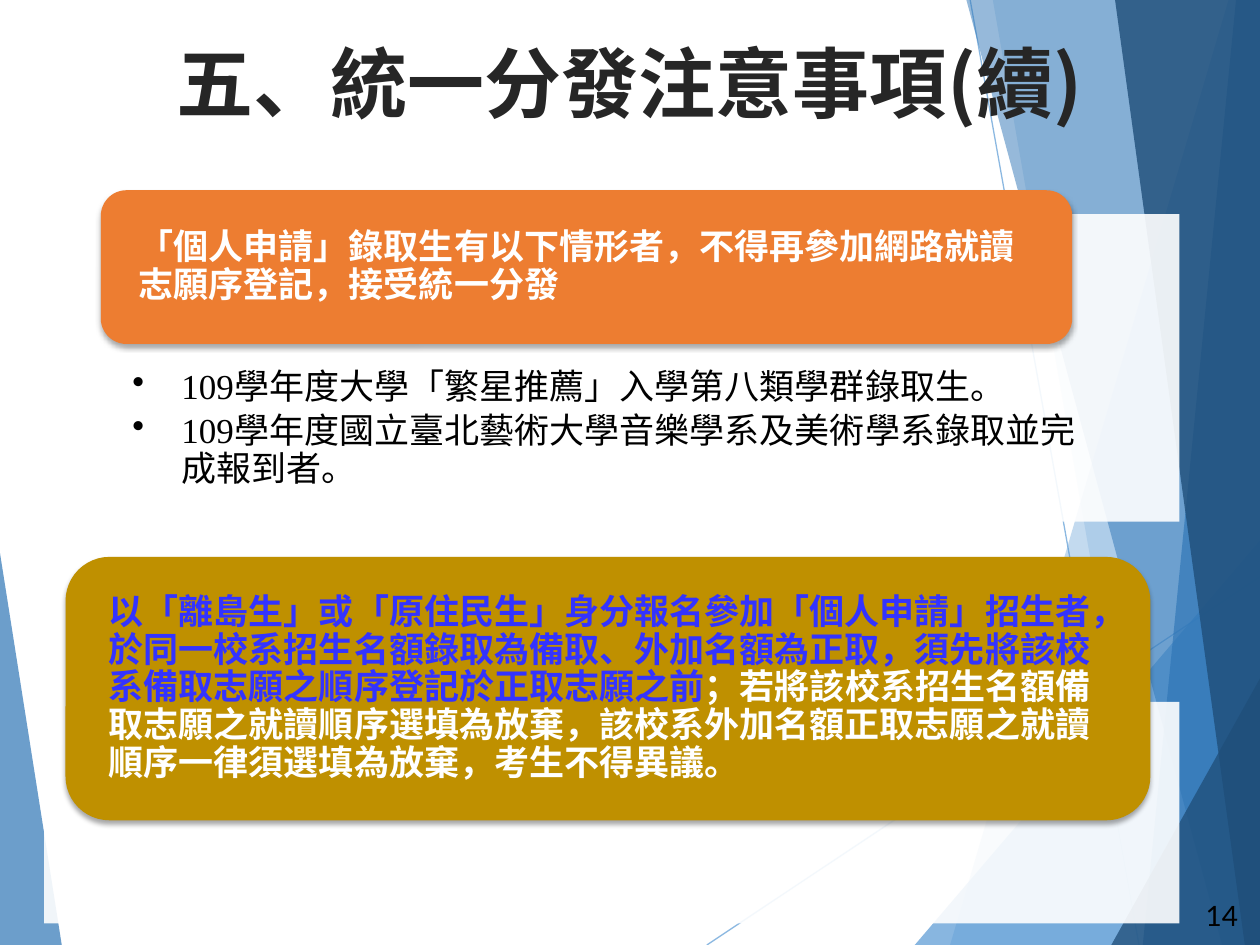
from lxml import etree
from pptx import Presentation
from pptx.dml.color import RGBColor
from pptx.enum import shapes, text
from pptx.oxml import parse_xml
from pptx.oxml.ns import nsdecls, qn
from pptx.util import Inches, Pt

SKY = RGBColor(0x5B, 0x9B, 0xD5)
BLUE = RGBColor(0x2E, 0x75, 0xB6)
NAVY = RGBColor(0x1F, 0x4E, 0x79)
ORANGE = RGBColor(0xED, 0x7D, 0x31)
GOLD = RGBColor(0xBF, 0x90, 0x00)
VIOLET = RGBColor(0x33, 0x33, 0xFF)
INK = RGBColor(0x26, 0x26, 0x26)
BLACK = RGBColor(0, 0, 0)
WHITE = RGBColor(0xFF, 0xFF, 0xFF)

CJK = "Noto Sans CJK SC"
SERIF = "Times New Roman"

RAYS = [((5.61, 7.5), (10.01, 4.57)), ((7.7, 0), (9.04, 7.5))]
FACETS = [
    (SKY, 36, [(9.75, 0), (7.54, 7.5), (10.02, 7.5), (10.01, 0)]),
    (SKY, 20, [(7.88, 0), (9.19, 7.5), (10.01, 7.5), (10.01, 0)]),
    (SKY, 72, [(7.26, 7.5), (10, 4.29), (10.01, 7.5)]),
    (BLUE, 50, [(7.67, 0), (9.7, 7.5), (10.01, 7.5), (10.01, 0)]),
    (BLUE, 66, [(9.81, 0), (9.07, 7.5), (10.01, 7.5), (10, 0)]),
    (NAVY, 80, [(8.85, 0), (9.88, 7.5), (10.02, 7.5), (10, 0)]),
    (NAVY, 76, [(8.82, 7.5), (10.02, 5.35), (10.02, 7.5)]),
    (BLUE, 70, [(0, 4.39), (0.49, 7.5), (0, 7.5)]),
]

TITLE = "五、統一分發注意事項(續)"
RULE = "「個人申請」錄取生有以下情形者，不得再參加網路就讀志願序登記，接受統一分發"
CASES = [
    "109學年度大學「繁星推薦」入學第八類學群錄取生。",
    "109學年度國立臺北藝術大學音樂學系及美術學系錄取並完成報到者。",
]
PRIORITY = ("以「離島生」或「原住民生」身分報名參加「個人申請」招生者，"
            "於同一校系招生名額錄取為備取、外加名額為正取，"
            "須先將該校系備取志願之順序登記於正取志願之前")
CONSEQUENCE = ("；若將該校系招生名額備取志願之就讀順序選填為放棄，"
               "該校系外加名額正取志願之就讀順序一律須選填為放棄，考生不得異議。")


def apply(target, **values):
    for name, value in values.items():
        setattr(target, name, value)


def box(left, top, width, height):
    return [Inches(v) for v in (left, top, width, height)]


def set_alpha(drawn, percent):
    """Make the solid fill or line colour partly transparent."""
    colour = drawn._xPr.find(qn("a:solidFill"))[0]
    etree.SubElement(colour, qn("a:alpha"), val=str(percent * 1000))


def fill_plain(shape, colour, alpha=100):
    shape.shadow.inherit = False
    shape.fill.solid()
    shape.fill.fore_color.rgb = colour
    shape.line.fill.background()
    if alpha < 100:
        set_alpha(shape.fill, alpha)


def set_insets(frame, left, top, right, bottom):
    apply(frame, word_wrap=True, margin_left=Inches(left), margin_top=Inches(top),
          margin_right=Inches(right), margin_bottom=Inches(bottom))


def add_run(paragraph, words, colour, size=20, latin=SERIF, bold=False):
    run = paragraph.add_run()
    run.text = words
    apply(run.font, size=Pt(size), name=latin, bold=bold)
    run.font.color.rgb = colour
    etree.SubElement(run._r.get_or_add_rPr(), qn("a:ea"), typeface=CJK)


def add_ray(slide, start, end):
    ray = slide.shapes.add_connector(
        shapes.MSO_CONNECTOR.STRAIGHT, *[Inches(v) for v in start + end])
    ray.line.width = Pt(0.75)
    ray.line.color.rgb = SKY
    ray._element.spPr.find(qn("a:ln")).find(qn("a:solidFill"))[0].append(
        parse_xml(f'<a:alpha {nsdecls("a")} val="70000"/>'))
    etree.SubElement(ray._element.spPr, qn("a:effectLst"))


def add_facet(slide, colour, alpha, corners):
    points = [(Inches(x), Inches(y)) for x, y in corners]
    builder = slide.shapes.build_freeform(*points[0])
    builder.add_line_segments(points[1:])
    fill_plain(builder.convert_to_shape(), colour, alpha)


def add_panel(slide, top, height):
    panel = slide.shapes.add_shape(
        shapes.MSO_SHAPE.RECTANGLE, *box(0.35, top, 9.01, height))
    fill_plain(panel, WHITE, 90)
    return panel


def add_cases(panel):
    frame = panel.text_frame
    set_insets(frame, 0.7, 1.23, 0.7, 0.16)
    frame.vertical_anchor = text.MSO_ANCHOR.TOP
    for index, words in enumerate(CASES):
        paragraph = frame.add_paragraph() if index else frame.paragraphs[0]
        apply(paragraph, alignment=text.PP_ALIGN.LEFT, line_spacing=0.9,
              space_after=Pt(3.5))
        props = paragraph._p.get_or_add_pPr()
        props.set("marL", str(Inches(0.39)))
        props.set("indent", str(Inches(-0.39)))
        etree.SubElement(props, qn("a:buChar"), char="•")
        add_run(paragraph, words, BLACK)


def add_callout(slide, bounds, colour, runs):
    """Add a rounded box with a soft shadow; runs are (words, colour) pairs."""
    callout = slide.shapes.add_shape(
        shapes.MSO_SHAPE.ROUNDED_RECTANGLE, *box(*bounds))
    fill_plain(callout, colour)
    callout._element.spPr.find(qn("a:effectLst")).append(parse_xml(
        f'<a:outerShdw {nsdecls("a")} blurRad="{Pt(3)}" dist="{Pt(2)}" dir="5400000"'
        ' rotWithShape="0"><a:srgbClr val="000000"><a:alpha val="35000"/>'
        '</a:srgbClr></a:outerShdw>'))
    frame = callout.text_frame
    set_insets(frame, 0.24, 0, 0.24, 0)
    frame.vertical_anchor = text.MSO_ANCHOR.MIDDLE
    paragraph = frame.paragraphs[0]
    apply(paragraph, alignment=text.PP_ALIGN.LEFT, line_spacing=0.9, space_after=Pt(8))
    for words, font_colour in runs:
        add_run(paragraph, words, font_colour, bold=True)


def add_page_number(slide):
    number = slide.shapes.add_textbox(*box(9.47, 7.08, 0.52, 0.37))
    number.text_frame.word_wrap = True
    add_run(number.text_frame.paragraphs[0], "14", BLACK, size=16, latin="Lato")


def place_title(slide):
    """Fill the title and lift it above the background facets."""
    title = slide.shapes.title
    left, top, width, height = box(0.45, 0.29, 9.09, 0.71)
    apply(title, left=left, top=top, width=width, height=height)
    apply(title.text_frame, word_wrap=True, auto_size=text.MSO_AUTO_SIZE.NONE,
          vertical_anchor=text.MSO_ANCHOR.MIDDLE)
    paragraph = title.text_frame.paragraphs[0]
    paragraph.alignment = text.PP_ALIGN.CENTER
    add_run(paragraph, TITLE, INK, size=44, latin=CJK, bold=True)
    slide.shapes._spTree.append(title._element)


def main():
    deck = Presentation()
    apply(deck, slide_width=Inches(10), slide_height=Inches(7.5))
    slide = deck.slides.add_slide(deck.slide_layouts[5])
    for start, end in RAYS:
        add_ray(slide, start, end)
    for facet in FACETS:
        add_facet(slide, *facet)
    add_page_number(slide)
    place_title(slide)
    add_cases(add_panel(slide, 1.7, 2.44))
    add_callout(slide, (0.8, 1.51, 7.71, 1.22), ORANGE, [(RULE, WHITE)])
    add_panel(slide, 5.57, 1.76)
    add_callout(slide, (0.52, 4.42, 8.61, 2.09), GOLD,
                [(PRIORITY, VIOLET), (CONSEQUENCE, WHITE)])
    deck.save("out.pptx")


if __name__ == "__main__":
    main()
